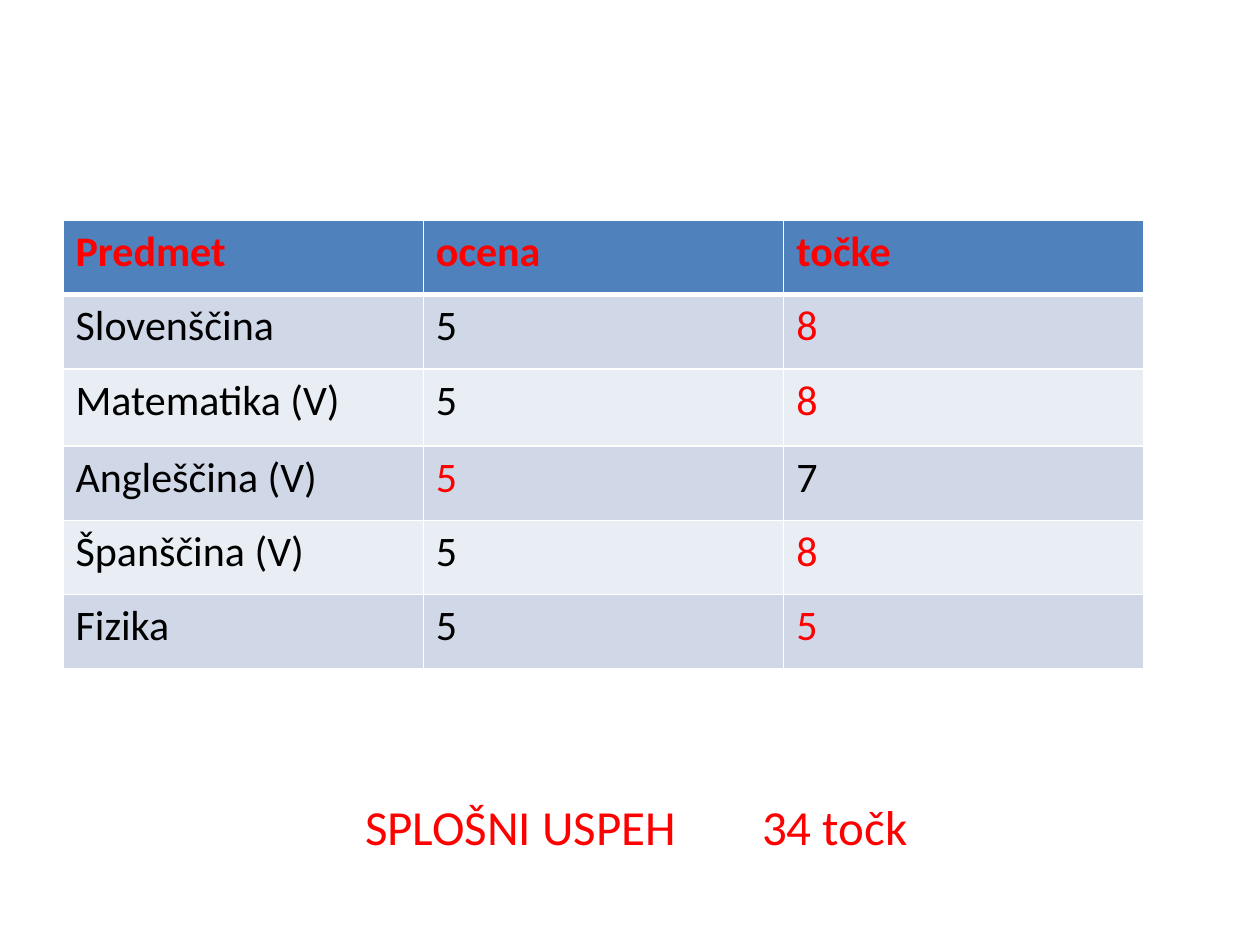
from dataclasses import dataclass

from lxml.etree import SubElement
from pptx import Presentation
from pptx.dml.color import RGBColor as Color
from pptx.enum.text import MSO_AUTO_SIZE as AutoSize
from pptx.oxml.ns import qn
from pptx.util import Inches, Pt


@dataclass(frozen=True)
class Theme:
    """Colours and type sizes of the slide."""
    font: str = "Calibri"
    table_size: int = 24
    total_size: int = 28
    text: str = "000000"
    accent: str = "FF0000"
    header: str = "4F81BD"
    bands: tuple = ("D0D8E8", "E9EDF4")
    border: str = "FFFFFF"


THEME = Theme()
HEADINGS = ("Predmet", "ocena", "točke")
GRADES = (
    ("Slovenščina", "5", "8"),
    ("Matematika (V)", "5", "8"),
    ("Angleščina (V)", "5", "7"),
    ("Španščina (V)", "5", "8"),
    ("Fizika", "5", "5"),
)
ACCENT_CELLS = {(1, 2), (2, 2), (3, 1), (4, 2), (5, 2)}
ROW_HEIGHTS = (0.59, 0.59, 0.61, 0.59, 0.59, 0.59)
COLUMN_WIDTH = 2.86


def write(paragraph, text, size, color, bold=False):
    """Add one formatted run to a paragraph."""
    run = paragraph.add_run()
    run.text = text
    values = {"name": THEME.font, "size": Pt(size), "bold": bold}
    for name, value in values.items():
        setattr(run.font, name, value)
    run.font.color.rgb = Color.from_string(color)


def set_borders(cell, is_header):
    """Draw the four cell borders, with a heavier rule under the header."""
    properties = cell._tc.get_or_add_tcPr()
    widths = {"L": 1, "R": 1, "T": 1, "B": 3 if is_header else 1}
    for side, width in widths.items():
        line = SubElement(properties, qn(f"a:ln{side}"), w=str(Pt(width)))
        fill = SubElement(line, qn("a:solidFill"))
        SubElement(fill, qn("a:srgbClr"), val=THEME.border)


def fill_cell(cell, text, row, column):
    """Style one table cell and write its text."""
    is_header = row == 0
    set_borders(cell, is_header)
    cell.fill.solid()
    fill = THEME.header if is_header else THEME.bands[(row - 1) % 2]
    cell.fill.fore_color.rgb = Color.from_string(fill)
    is_accent = is_header or (row, column) in ACCENT_CELLS
    color = THEME.accent if is_accent else THEME.text
    write(cell.text_frame.paragraphs[0], text, THEME.table_size, color, is_header)


def add_grades(slide):
    """Add the table of subjects, grades and points."""
    rows = (HEADINGS, *GRADES)
    table = slide.shapes.add_table(
        len(rows), len(HEADINGS), Inches(0.5), Inches(1.75),
        Inches(COLUMN_WIDTH * len(HEADINGS)), Inches(sum(ROW_HEIGHTS))).table
    for column in table.columns:
        column.width = Inches(COLUMN_WIDTH)
    for row, height in zip(table.rows, ROW_HEIGHTS):
        row.height = Inches(height)
    for row, texts in enumerate(rows):
        for column, text in enumerate(texts):
            fill_cell(table.cell(row, column), text, row, column)


def add_total(slide, label, points):
    """Add the total line with its points at a tab stop."""
    shape = slide.shapes.add_textbox(Inches(2.8), Inches(6.27), Inches(5.2), Inches(0.57))
    frame = shape.text_frame
    for name, value in {"word_wrap": True, "auto_size": AutoSize.SHAPE_TO_FIT_TEXT}.items():
        setattr(frame, name, value)
    paragraph = frame.paragraphs[0]
    tabs = SubElement(paragraph._p.get_or_add_pPr(), qn("a:tabLst"))
    SubElement(tabs, qn("a:tab"), pos=str(Inches(3.15)), algn="l")
    write(paragraph, f"{label}\t{points}", THEME.total_size, THEME.accent)


def main():
    """Build and save the presentation."""
    presentation = Presentation()
    for name, value in {"slide_width": Inches(10), "slide_height": Inches(7.5)}.items():
        setattr(presentation, name, value)
    slide = presentation.slides.add_slide(presentation.slide_layouts[6])
    add_grades(slide)
    add_total(slide, "SPLOŠNI USPEH", "34 točk")
    presentation.save("out.pptx")


if __name__ == "__main__":
    main()
